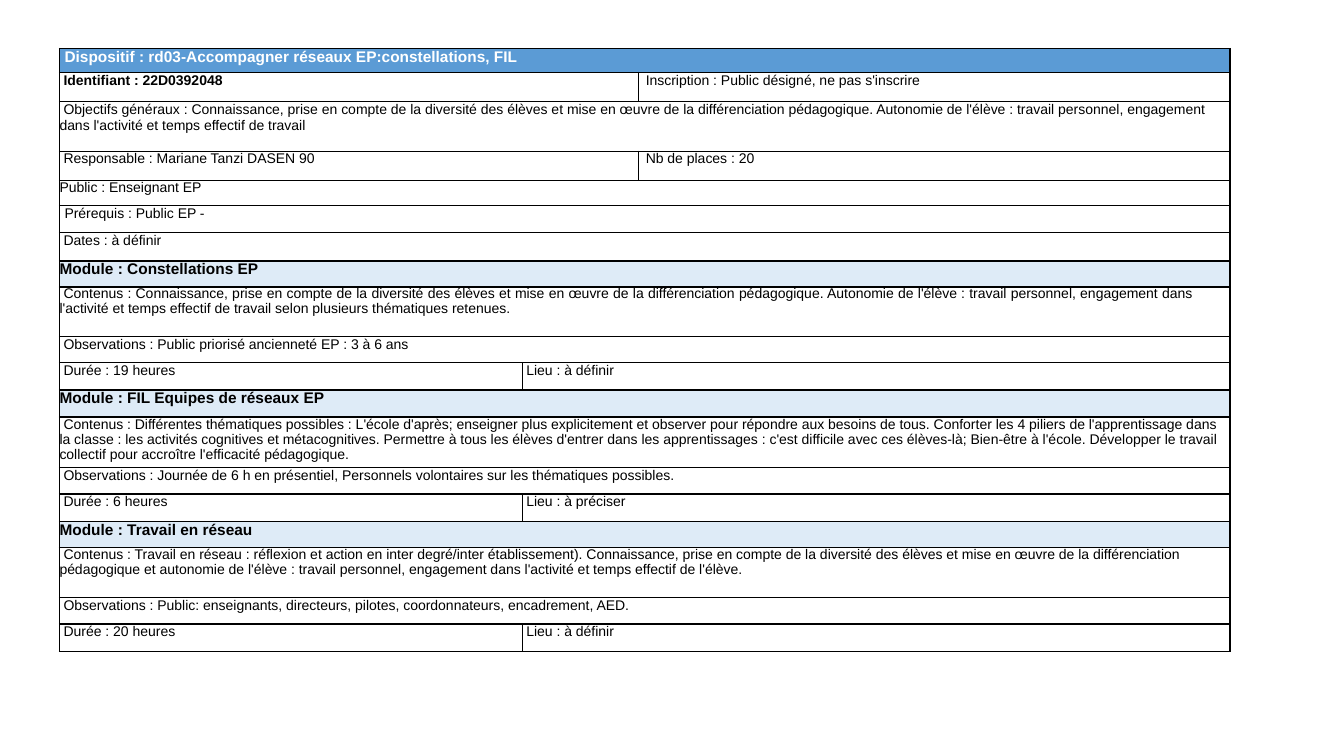
from dataclasses import dataclass

from lxml import etree
from pptx import Presentation
from pptx.dml.color import RGBColor
from pptx.enum.text import PP_ALIGN
from pptx.oxml.ns import qn
from pptx.util import Inches, Pt

JUSTIFY = PP_ALIGN.JUSTIFY
LEFT = 0.59
BLACK, WHITE, BLUE, PALE = "000000", "FFFFFF", "5B9BD5", "DEEBF7"


@dataclass
class Cell:
    text: str
    before: float = 1.4
    margin: float = 0.04
    first: float = 0
    right: float = 0
    size: int = 10
    bold: bool = False
    color: str = BLACK
    fill: str | None = None
    spacing: object = None
    align: object = None
    nbsp: bool = False


@dataclass
class Row:
    height: float
    cells: list[Cell]


@dataclass
class Grid:
    top: float
    widths: list[float]
    rows: list[Row]


def rgb(color: str) -> RGBColor:
    return RGBColor.from_string(color)


def heading(title: str, before: float) -> Row:
    return Row(0.26, [Cell(f"Module : {title}", before, 0, size=11, bold=True, fill=PALE)])


def module(content: str, notes: str, hours: int, place: str, **layout) -> list[Row]:
    options = {"before": 0.8, "margin": 0, "first": 0.04, "spacing": 0.97} | layout
    return [
        Row(0.5, [Cell(f"Contenus : {content}", **options)]),
        Row(0.26, [Cell(f"Observations : {notes}")]),
        Row(0.27, [Cell(f"Durée : {hours} heures\u00a0"), Cell(f"Lieu : {place}")]),
    ]


def add_borders(cell) -> None:
    tc_pr = cell._tc.get_or_add_tcPr()
    for i, side in enumerate(("lnL", "lnR", "lnT", "lnB")):
        ln = etree.Element(qn(f"a:{side}"), w=str(Pt(1)))
        fill = etree.SubElement(ln, qn("a:solidFill"))
        etree.SubElement(fill, qn("a:srgbClr"), val=BLACK)
        tc_pr.insert(i, ln)


def write_cell(cell, item: Cell) -> None:
    p = cell.text_frame.paragraphs[0]
    if item.nbsp:
        p.add_run().text = "\u00a0"
    p.add_run().text = item.text
    p.space_before = Pt(item.before)
    if item.spacing:
        p.line_spacing = item.spacing
    if item.align:
        p.alignment = item.align
    p_pr = p._p.get_or_add_pPr()
    p_pr.set("marL", str(Inches(item.margin)))
    p_pr.set("marR", str(Inches(item.right)))
    p_pr.set("indent", str(Inches(item.first)))
    for r in p.runs:
        r.font.name = "Times New Roman" if r.text == "\u00a0" else "Arial"
        r.font.size = Pt(item.size)
        r.font.bold = item.bold
        r.font.color.rgb = rgb(item.color)


def add_grid(slide, grid: Grid) -> None:
    height = sum(row.height for row in grid.rows)
    table = slide.shapes.add_table(
        len(grid.rows), len(grid.widths), Inches(LEFT), Inches(grid.top),
        Inches(sum(grid.widths)), Inches(height)).table
    table.first_row = table.horz_banding = False
    for column, width in zip(table.columns, grid.widths):
        column.width = Inches(width)
    for i, row in enumerate(grid.rows):
        table.rows[i].height = Inches(row.height)
        cells = list(table.rows[i].cells)
        for cell in cells:
            cell.margin_left = cell.margin_right = cell.margin_top = cell.margin_bottom = 0
            fill = row.cells[0].fill
            if fill:
                cell.fill.solid()
                cell.fill.fore_color.rgb = rgb(fill)
            else:
                cell.fill.background()
            add_borders(cell)
        if len(row.cells) == 1:
            cells[0].merge(cells[-1])
        for cell, item in zip(cells, row.cells):
            write_cell(cell, item)


OVERVIEW = [
    Row(0.24, [Cell("Dispositif : rd03-Accompagner réseaux EP:constellations, FIL", 0.9, 0.05,
                    size=11, bold=True, color=WHITE, fill=BLUE)]),
    Row(0.29, [Cell("Identifiant : 22D0392048", 2.6, bold=True),
               Cell("Inscription : Public désigné, ne pas s'inscrire", 0, nbsp=True)]),
    Row(0.49, [Cell("Objectifs généraux : Connaissance, prise en compte de la diversité des élèves "
                    "et mise en œuvre de la différenciation pédagogique. Autonomie de l'élève : "
                    "travail personnel, engagement dans l'activité et temps effectif de travail",
                    0.1, 0, 0.04, spacing=Pt(11.3))]),
    Row(0.29, [Cell("Responsable : Mariane Tanzi DASEN 90", 2.3),
               Cell("Nb de places : 20", 0, nbsp=True)]),
    Row(0.25, [Cell("Public : Enseignant EP", 0.3, 0)]),
    Row(0.27, [Cell("Prérequis : Public EP -", margin=0.05)]),
    Row(0.28, [Cell("Dates : à définir", 1.9)]),
    heading("Constellations EP", 2.2),
]
CONSTELLATIONS = module(
    "Connaissance, prise en compte de la diversité des élèves et mise en œuvre de la "
    "différenciation pédagogique. Autonomie de l'élève : travail personnel, engagement dans "
    "l'activité et temps effectif de travail selon plusieurs thématiques retenues.",
    "Public priorisé ancienneté EP : 3 à 6 ans", 19, "à définir", align=JUSTIFY, right=0.38)
TEAMS = module(
    "Différentes thématiques possibles : L'école d'après; enseigner plus explicitement et "
    "observer pour répondre aux besoins de tous. Conforter les 4 piliers de l'apprentissage "
    "dans la classe : les activités cognitives et métacognitives. Permettre à tous les élèves "
    "d'entrer dans les apprentissages : c'est difficile avec ces élèves-là; Bien-être à l'école. "
    "Développer le travail collectif pour accroître l'efficacité pédagogique.",
    "Journée de 6 h en présentiel, Personnels volontaires sur les thématiques possibles.",
    6, "à préciser", before=0.9)
NETWORK = module(
    "Travail en réseau : réflexion et action en inter degré/inter établissement). Connaissance, "
    "prise en compte de la diversité des élèves et mise en œuvre de la différenciation "
    "pédagogique et autonomie de l'élève : travail personnel, engagement dans l'activité et "
    "temps effectif de l'élève.",
    "Public: enseignants, directeurs, pilotes, coordonnateurs, encadrement, AED.",
    20, "à définir")
MODULE_WIDTHS = [4.59, 7.02]
GRIDS = [
    Grid(0.48, [5.74, 5.87], OVERVIEW),
    Grid(2.84, MODULE_WIDTHS, CONSTELLATIONS + [heading("FIL Equipes de réseaux EP", 1.9)]),
    Grid(4.14, MODULE_WIDTHS, TEAMS + [heading("Travail en réseau", 1.8)]),
    Grid(5.43, MODULE_WIDTHS, NETWORK),
]


def main() -> None:
    prs = Presentation()
    prs.slide_width, prs.slide_height = Inches(13.33), Inches(7.5)
    slide = prs.slides.add_slide(prs.slide_layouts[6])
    for grid in GRIDS:
        add_grid(slide, grid)
    prs.save("out.pptx")


if __name__ == "__main__":
    main()
